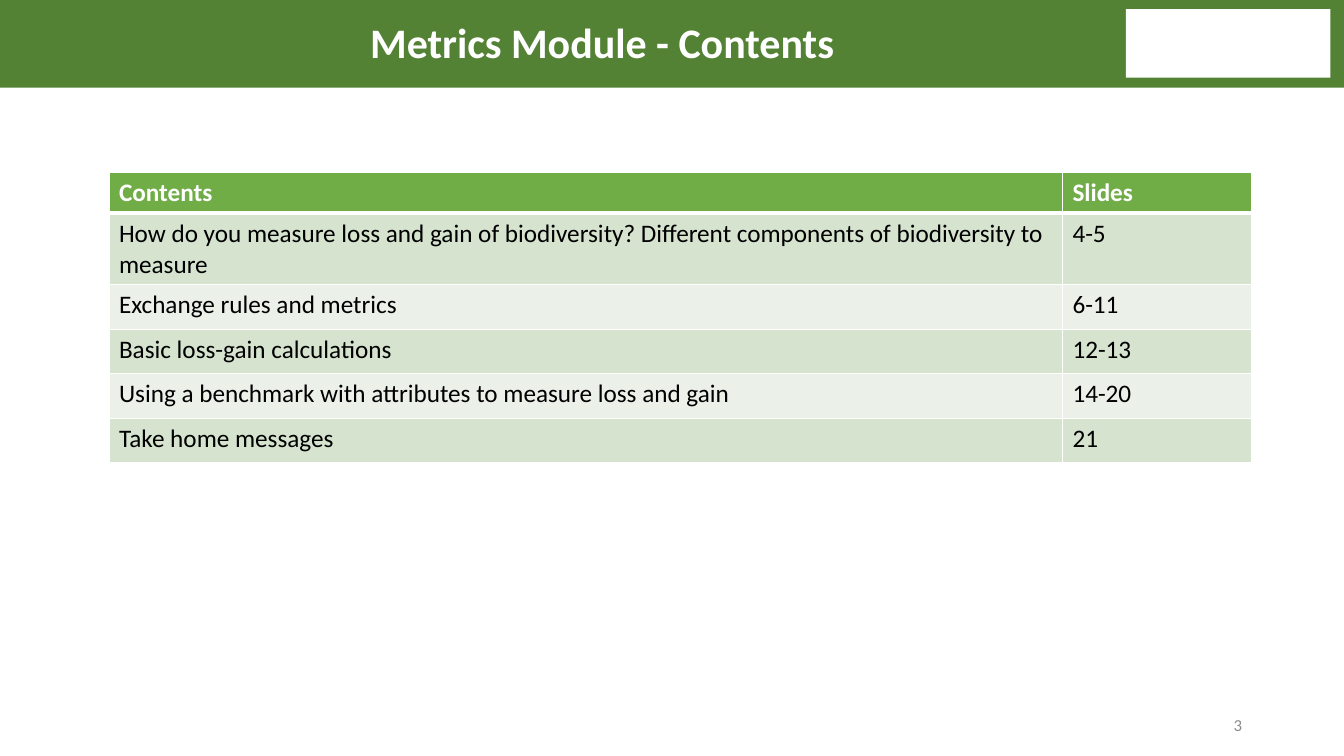
from dataclasses import dataclass

from lxml.etree import SubElement
from pptx import Presentation
from pptx.dml.color import RGBColor
from pptx.enum.shapes import MSO_SHAPE
from pptx.enum.text import MSO_ANCHOR, PP_ALIGN
from pptx.oxml.ns import qn
from pptx.util import Pt

WHITE, BLACK, GREY = "FFFFFF", "000000", "8C8C8C"
DARK_GREEN, GREEN = "548235", "70AD47"
BANDS = ("D5E3CF", "EBF1E9")
COLUMN_WIDTHS = (681.1, 135.4)
HEADER_HEIGHT, TWO_LINE_HEIGHT, ROW_HEIGHT = 29.2, 51.2, 31.75


@dataclass(frozen=True)
class Area:
    left: float
    top: float
    width: float
    height: float

    def lengths(self) -> tuple[Pt, Pt, Pt, Pt]:
        return Pt(self.left), Pt(self.top), Pt(self.width), Pt(self.height)


@dataclass(frozen=True)
class Entry:
    topic: str
    slides: str
    height: float = ROW_HEIGHT


@dataclass(frozen=True)
class Label:
    text: str
    area: Area
    size: float
    color: str
    align: PP_ALIGN
    bold: bool = False
    line_spacing: float = 1.0


BARS = (
    (Area(0, -2.2, 960, 64.8), DARK_GREEN),
    (Area(804.2, 6.5, 146.2, 49), WHITE),
)
LABELS = (
    Label("3", Area(830.9, 506.9, 63.4, 22.3), 12, GREY, PP_ALIGN.RIGHT),
    Label("Metrics Module - Contents", Area(57.6, 0, 745.2, 64.8), 30, WHITE,
          PP_ALIGN.CENTER, True, 0.9),
)
ENTRIES = (
    Entry("Contents", "Slides", HEADER_HEIGHT),
    Entry("How do you measure loss and gain of biodiversity? "
          "Different components of biodiversity to measure", "4-5", TWO_LINE_HEIGHT),
    Entry("Exchange rules and metrics", "6-11"),
    Entry("Basic loss-gain calculations", "12-13"),
    Entry("Using a benchmark with attributes to measure loss and gain", "14-20"),
    Entry("Take home messages", "21"),
)


def rgb(color: str) -> RGBColor:
    return RGBColor.from_string(color)


def write(para, text: str, size: float, color: str, bold: bool) -> None:
    span = para.add_run()
    span.text = text
    formats = {"name": "Calibri", "size": Pt(size), "bold": bold}
    for name, value in formats.items():
        setattr(span.font, name, value)
    span.font.color.rgb = rgb(color)


def add_bar(page, area: Area, color: str) -> None:
    bar = page.shapes.add_shape(MSO_SHAPE.RECTANGLE, *area.lengths())
    bar.shadow.inherit = False
    bar.fill.solid()
    bar.fill.fore_color.rgb = rgb(color)
    bar.line.fill.background()


def add_label(page, label: Label) -> None:
    frame = page.shapes.add_textbox(*label.area.lengths()).text_frame
    frame.word_wrap = True
    frame.vertical_anchor = MSO_ANCHOR.MIDDLE
    para = frame.paragraphs[0]
    para.alignment = label.align
    para.line_spacing = label.line_spacing
    write(para, label.text, label.size, label.color, label.bold)


def add_borders(cell, widths: dict[str, float]) -> None:
    """Draw white cell borders; must run before the cell gets its fill."""
    properties = cell._tc.get_or_add_tcPr()
    for side, width in widths.items():
        line = SubElement(properties, qn(f"a:{side}"), w=str(Pt(width)))
        fill = SubElement(line, qn("a:solidFill"))
        SubElement(fill, qn("a:srgbClr"), val=WHITE)


def add_contents(page) -> None:
    area = Area(77.8, 123.1, sum(COLUMN_WIDTHS), sum(entry.height for entry in ENTRIES))
    table = page.shapes.add_table(
        len(ENTRIES), len(COLUMN_WIDTHS), *area.lengths()).table
    for column, width in zip(table.columns, COLUMN_WIDTHS):
        column.width = Pt(width)
    for index, entry in enumerate(ENTRIES):
        header = index == 0
        table.rows[index].height = Pt(entry.height)
        for cell, text in zip(table.rows[index].cells, (entry.topic, entry.slides)):
            add_borders(cell, {"lnL": 1, "lnR": 1, "lnT": 3 if index == 1 else 1,
                               "lnB": 3 if header else 1})
            cell.fill.solid()
            cell.fill.fore_color.rgb = rgb(GREEN if header else BANDS[(index - 1) % 2])
            write(cell.text_frame.paragraphs[0], text, 18,
                  WHITE if header else BLACK, header)


def main() -> None:
    deck = Presentation()
    deck.slide_width, deck.slide_height = Pt(960), Pt(540)
    page = deck.slides.add_slide(deck.slide_layouts[6])
    for area, color in BARS:
        add_bar(page, area, color)
    for label in LABELS:
        add_label(page, label)
    add_contents(page)
    deck.save("out.pptx")


if __name__ == "__main__":
    main()
